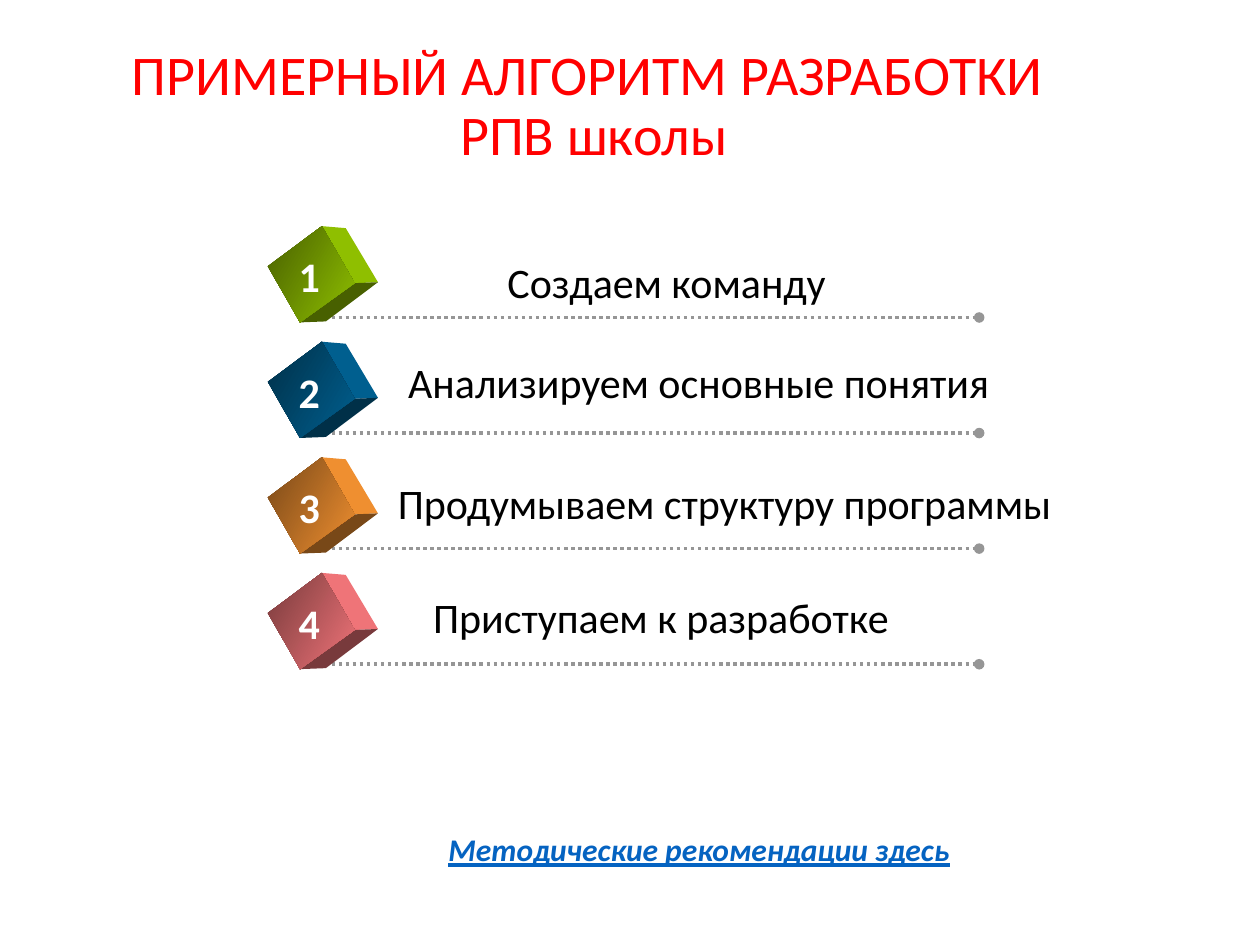
from lxml import etree
from pptx import Presentation
from pptx.dml.color import RGBColor
from pptx.enum.dml import MSO_LINE
from pptx.enum.shapes import MSO_CONNECTOR
from pptx.enum.text import MSO_ANCHOR, PP_ALIGN
from pptx.oxml.ns import qn
from pptx.util import Cm, Pt

CUBE_X, CUBE_Y, PITCH = 5.4, 4.56, 2.33
FRONT = [(0, 0.81), (1.09, 0), (1.75, 1.15), (0.65, 1.94)]
SIDE = [(1.09, 0), (1.57, 0.04), (2.22, 1.13), (1.75, 1.15)]
BOTTOM = [(1.75, 1.15), (2.22, 1.13), (1.17, 1.92), (0.65, 1.94)]
STEPS = [
    ("Создаем команду", 9.98, 5.05, 6.99, "8FBF00", "486000"),
    ("Анализируем основные понятия", 7.98, 7.06, 12.34, "005F8F", "003048"),
    ("Продумываем структуру программы", 7.77, 9.5, 13.82, "EF8F30", "784818"),
    ("Приступаем к разработке", 8.48, 11.79, 9.78, "EF7478", "783A3C"),
]


def rgb(value):
    return RGBColor.from_string(value)


def style_runs(p, size, color, bold=False, italic=False, underline=False):
    for r in p.runs:
        f = r.font
        f.name, f.size, f.color.rgb = "Calibri", Pt(size), rgb(color)
        f.bold, f.italic, f.underline = bold, italic, underline


def add_title(s, text):
    sp = s.shapes.title
    sp.left, sp.top, sp.width, sp.height = Cm(2.36), Cm(0.89), Cm(19.23), Cm(2.54)
    tf = sp.text_frame
    tf.text = text
    tf.vertical_anchor = MSO_ANCHOR.MIDDLE
    p = tf.paragraphs[0]
    p.alignment = PP_ALIGN.CENTER
    p.line_spacing = 0.9
    style_runs(p, 32, "FF0000")


def add_text(s, text, x, y, w, h, size, color, **style):
    tf = s.shapes.add_textbox(Cm(x), Cm(y), Cm(w), Cm(h)).text_frame
    tf.word_wrap = False
    tf.text = text
    style_runs(tf.paragraphs[0], size, color, **style)


def add_dotted_line(s, x1, x2, y):
    c = s.shapes.add_connector(MSO_CONNECTOR.STRAIGHT, Cm(x1), Cm(y), Cm(x2), Cm(y))
    c.line.color.rgb = rgb("969696")
    c.line.width = Pt(2)
    c.line.dash_style = MSO_LINE.ROUND_DOT
    ln = c.line._get_or_add_ln()
    etree.SubElement(ln, qn("a:tailEnd"), type="oval")
    etree.SubElement(c._element.spPr, qn("a:effectLst"))


def add_face(s, points, x, y):
    pts = [(Cm(x + dx), Cm(y + dy)) for dx, dy in points]
    builder = s.shapes.build_freeform(*pts[0])
    builder.add_line_segments(pts[1:], close=True)
    sp = builder.convert_to_shape()
    sp.shadow.inherit = False
    sp.line.fill.background()
    return sp


def add_cube(s, x, y, light, dark):
    for points, color in ((SIDE, light), (BOTTOM, dark)):
        fill = add_face(s, points, x, y).fill
        fill.solid()
        fill.fore_color.rgb = rgb(color)
    fill = add_face(s, FRONT, x, y).fill
    fill.gradient()
    fill.gradient_angle = 330
    for stop, color in zip(fill.gradient_stops, (dark, light)):
        stop.color.rgb = rgb(color)


def main():
    prs = Presentation()
    prs.slide_width, prs.slide_height = Cm(25.4), Cm(19.05)
    s = prs.slides.add_slide(prs.slide_layouts[5])
    add_title(s, "ПРИМЕРНЫЙ АЛГОРИТМ РАЗРАБОТКИ \vРПВ школы")
    for i, (text, x, y, w, light, dark) in enumerate(STEPS):
        top = CUBE_Y + i * PITCH
        add_dotted_line(s, 6.4, 19.74, top + 1.84)
        add_cube(s, CUBE_X, top, light, dark)
        add_text(s, text, x, y, w, 1.3, 24, "000000")
        add_text(s, str(i + 1), CUBE_X + 0.37, top + 0.37, 1, 1.27, 24, "FFFFFF", bold=True)
    add_text(s, "Методические рекомендации здесь", 8.79, 16.61, 10.72, 1.02, 18, "0563C1",
             bold=True, italic=True, underline=True)
    prs.save("out.pptx")


if __name__ == "__main__":
    main()
